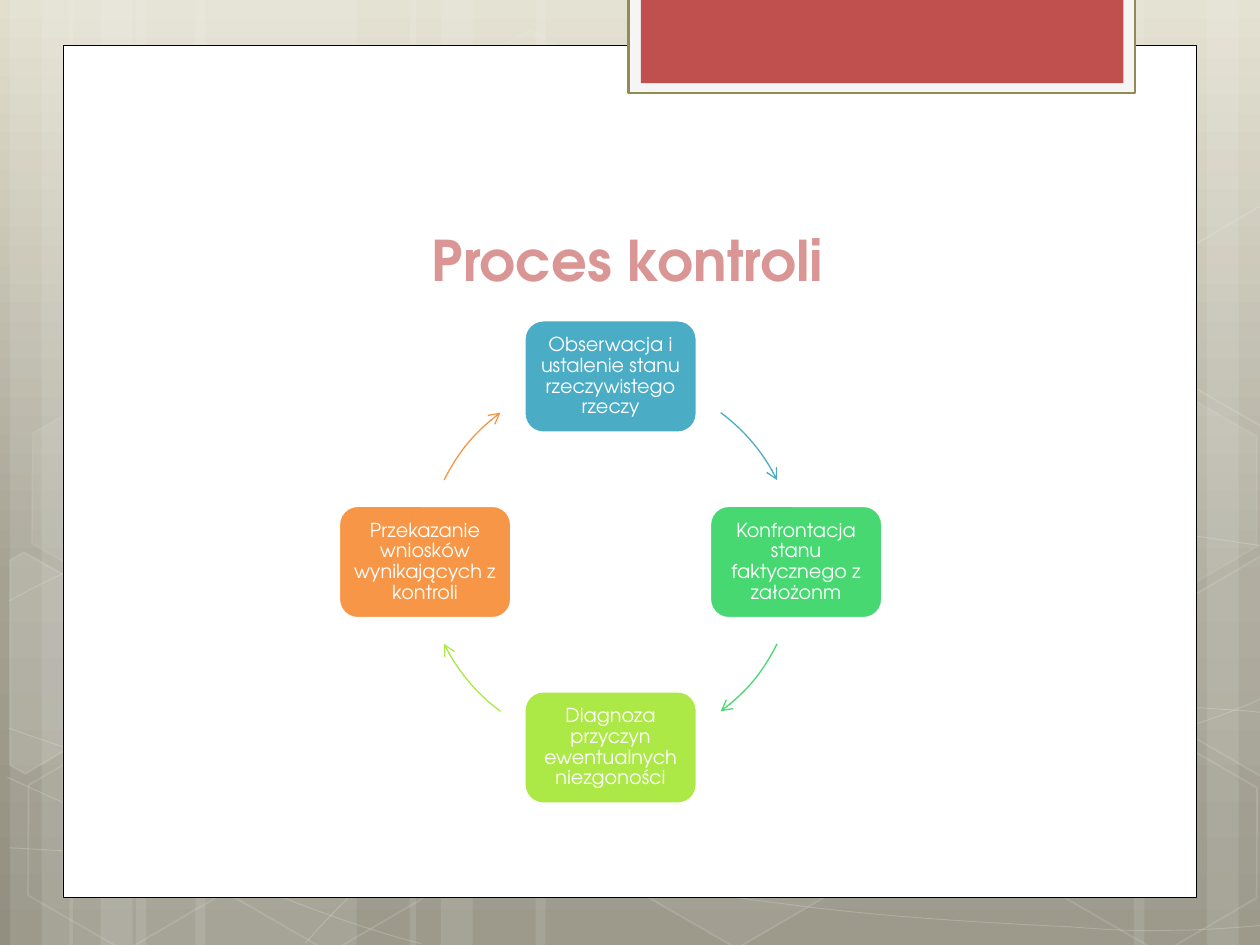
import copy
import math

import lxml.etree
import pptx
import pptx.dml.color
import pptx.enum.shapes
import pptx.enum.text
import pptx.oxml.ns
import pptx.util
from pptx.util import Cm

FONT = "TeX Gyre Adventor"
WIDTH, HEIGHT = 25.4, 19.05
TITLE = "Proces kontroli"
# text, colour, direction of the box from the centre, start and end of the arrow's arc (degrees)
STEPS = [
    ("Obserwacja i ustalenie stanu rzeczywistego rzeczy", "4BACC6", 270, (306.4, 333.8)),
    ("Konfrontacja stanu faktycznego z założonm", "47D872", 0, (26.2, 53.6)),
    ("Diagnoza przyczyn ewentualnych niezgoności", "ACE946", 90, (126.4, 153.8)),
    ("Przekazanie wniosków wynikających z kontroli", "F79646", 180, (206.2, 233.6)),
]
CENTRE_X, CENTRE_Y, RADIUS = 12.31, 11.33, 3.74
BOX_WIDTH, BOX_HEIGHT = 3.47, 2.26

BACKGROUND = [(0, "E2DFCF"), (0.62, "A5A293"), (1, "928F80")]
# left, width
STRIPES = [(2.74, 4.45), (0.2, 1.27), (0.84, 2.11), (3.94, 4.45), (1.4, 1.27), (2.03, 2.11),
           (18.62, 4.45), (24.33, 1.27), (22.86, 2.11), (10.8, 7.82), (8.26, 1.27), (8.89, 2.11)]
# Bezier chains: a start, then two handles and an end for each segment
CURVES = [
    [(0.18, 17.09), (1.55, 17.17), (2.92, 17.25), (4.83, 17.22), (6.73, 17.2), (9.09, 17.15),
     (11.63, 16.89), (14.17, 16.64), (17.78, 16.15), (20.12, 15.67), (22.43, 15.19),
     (24.82, 14.43), (25.58, 14)],
    [(0.18, 12.12), (0.91, 11.71), (1.65, 11.33), (3.07, 10.95), (4.52, 10.57), (6.58, 10.01),
     (8.81, 9.83), (11.07, 9.65), (13.82, 9.63), (16.61, 9.83), (19.41, 10.03),
     (24.05, 10.82), (25.58, 11.02)],
    [(0.15, 15.67), (3.23, 17.07), (6.27, 18.47), (8.48, 19.02)],
    [(0.18, 14.68), (0.97, 14.96), (1.78, 15.24), (3.25, 15.65), (4.72, 16.03), (6.93, 16.66),
     (9.07, 17.09), (11.18, 17.53), (13.84, 17.98), (15.95, 18.24), (18.06, 18.52),
     (20.32, 18.62), (21.67, 18.69), (22.99, 18.8), (23.34, 18.75), (24, 18.75),
     (24.66, 18.72), (25.12, 18.69), (25.58, 18.64)],
    [(6.15, 19.02), (6.6, 18.52), (7.06, 18.01), (7.67, 17.55), (8.28, 17.09), (9.14, 16.59),
     (9.86, 16.23), (10.57, 15.88), (11, 15.72), (11.94, 15.47), (12.85, 15.21),
     (14.55, 14.86), (15.44, 14.68), (16.36, 14.5), (16.48, 14.5), (17.27, 14.45),
     (18.06, 14.38), (19.3, 14.3), (20.17, 14.27), (21.06, 14.25), (22.5, 14.27),
     (22.5, 14.27), (23, 14.27), (23.6, 14.27), (24.21, 14.27), (24.66, 14.3),
     (25.1, 14.33), (25.32, 14.35), (25.55, 14.38), (25.48, 14.35), (25.55, 14.38)],
]
# left, top, fill opacity, line opacity (percent)
HEXAGONS = [(8.48, 0.91, 4, 8), (12.62, 14.96, 6, 12), (0.28, 15.01, 0, 12),
            (0.36, 7.92, 7, 8), (4.42, 15.04, 0, 12), (19.13, 11.51, 10, 12),
            (21.18, 15.06, 0, 12), (21.18, 7.98, 7, 8)]
# fill opacity, corners
CUT_HEXAGONS = [
    (10, [(0.2, 11.3), (0.48, 11.13), (2.44, 12.24), (2.41, 14.48), (0.51, 15.6), (0.2, 15.42)]),
    (4, [(23.52, 12.32), (25.43, 11.2), (25.63, 11.33), (25.63, 15.57), (25.45, 15.67),
         (23.52, 14.55)]),
    (0, [(23.52, 5.26), (25.43, 4.14), (25.65, 4.27), (25.63, 8.51), (25.45, 8.61),
         (23.52, 7.49)]),
]
# left, top, width, height, fill, line, line width
FRAMES = [(1.27, 0.91, 22.86, 17.19, "FFFFFF", "000000", 0.5),
          (12.67, -0.05, 10.21, 1.93, "F5F5F5", "948A54", 1.25),
          (12.92, -0.05, 9.73, 1.73, "C0504D", None, 0)]

KIND = pptx.enum.shapes.MSO_SHAPE
ANCHOR = pptx.enum.text.MSO_ANCHOR
qn = pptx.oxml.ns.qn


def colour(code):
    return pptx.dml.color.RGBColor.from_string(code)


def fade(parent, percent):
    """Make the solid colour inside an XML element partly transparent."""
    if percent < 100:
        rgb = parent.find(qn("a:solidFill")).find(qn("a:srgbClr"))
        lxml.etree.SubElement(rgb, qn("a:alpha"), val=str(percent * 1000))


def style(shape, fill=None, fill_opacity=100, line=None, line_width=1, line_opacity=100):
    shape.shadow.inherit = False
    properties = shape.element.spPr
    if fill and fill_opacity:
        shape.fill.solid()
        shape.fill.fore_color.rgb = colour(fill)
        fade(properties, fill_opacity)
    else:
        shape.fill.background()
    if line:
        shape.line.color.rgb = colour(line)
        shape.line.width = pptx.util.Pt(line_width)
        fade(properties.find(qn("a:ln")), line_opacity)
    else:
        shape.line.fill.background()
    return shape


def add_preset(slide, kind, left, top, width, height, **look):
    shape = slide.shapes.add_shape(kind, Cm(left), Cm(top), Cm(width), Cm(height))
    return style(shape, **look)


def add_outline(slide, points, close, **look):
    start, *rest = [(Cm(x), Cm(y)) for x, y in points]
    builder = slide.shapes.build_freeform(*start)
    builder.add_line_segments(rest, close=close)
    return style(builder.convert_to_shape(), **look)


def bend(shape):
    """Turn each three straight segments of a freeform into one Bezier segment."""
    outline = shape.element.find(".//" + qn("a:path"))
    segments = outline.findall(qn("a:lnTo"))
    for first in range(0, len(segments), 3):
        curve = lxml.etree.SubElement(outline, qn("a:cubicBezTo"))
        for segment in segments[first:first + 3]:
            curve.append(segment[0])
            outline.remove(segment)


def write(shape, text, size, code, bold=False, anchor=ANCHOR.MIDDLE, inset=None,
          line_spacing=None, space_after=None):
    frame = shape.text_frame
    frame.word_wrap = True
    frame.vertical_anchor = anchor
    if inset is not None:
        frame.margin_left = frame.margin_right = Cm(inset)
        frame.margin_top = frame.margin_bottom = Cm(inset)
    para = frame.paragraphs[0]
    para.alignment = pptx.enum.text.PP_ALIGN.CENTER
    para.line_spacing = line_spacing
    if space_after is not None:
        para.space_after = pptx.util.Pt(space_after)
    span = para.add_run()
    span.text = text
    span.font.name, span.font.size, span.font.bold = FONT, pptx.util.Pt(size), bold
    span.font.color.rgb = colour(code)


def add_background(slide):
    fill = slide.background.fill
    fill.gradient()
    fill.gradient_angle = 270
    stops = slide.element.find(".//" + qn("a:gsLst"))
    stops.append(copy.deepcopy(stops[-1]))
    for stop, (position, code) in zip(fill.gradient_stops, BACKGROUND):
        stop.position = position
        stop.color.rgb = colour(code)
    for left, width in STRIPES:
        add_preset(slide, KIND.RECTANGLE, left, 0, width, HEIGHT, fill="FFFFFF", fill_opacity=10)
    for chain in CURVES:
        bend(add_outline(slide, chain, False, line="FFFFFF", line_width=0.5, line_opacity=20))
    for left, top, inside, edge in HEXAGONS:
        hexagon = add_preset(slide, KIND.HEXAGON, left, top, 4.45, 3.86, fill="FFFFFF",
                             fill_opacity=inside, line="FFFFFF", line_opacity=edge)
        hexagon.adjustments[0] = 0.285
        hexagon.rotation = 30
    for inside, corners in CUT_HEXAGONS:
        add_outline(slide, corners, True, fill="FFFFFF", fill_opacity=inside,
                    line="FFFFFF", line_opacity=12)
    for left, top, width, height, fill, line, line_width in FRAMES:
        add_preset(slide, KIND.RECTANGLE, left, top, width, height, fill=fill,
                   line=line, line_width=line_width)


def add_title(slide):
    title = slide.shapes.title
    slide.shapes.element.append(title.element)  # in front of the white panel
    title.left, title.top, title.width, title.height = Cm(2.9), Cm(2.84), Cm(19.51), Cm(3.18)
    write(title, TITLE, 32, "D99694", bold=True, anchor=ANCHOR.BOTTOM)


def add_cycle(slide):
    for text, code, direction, arc in STEPS:
        x = CENTRE_X + RADIUS * math.cos(math.radians(direction))
        y = CENTRE_Y + RADIUS * math.sin(math.radians(direction))
        box = add_preset(slide, KIND.ROUNDED_RECTANGLE, x - BOX_WIDTH / 2, y - BOX_HEIGHT / 2,
                         BOX_WIDTH, BOX_HEIGHT, fill=code, line="FFFFFF", line_width=1.25)
        write(box, text, 11, "FFFFFF", inset=0.12, line_spacing=0.9, space_after=3.85)
        arrow = add_preset(slide, KIND.ARC, CENTRE_X - RADIUS, CENTRE_Y - RADIUS,
                           2 * RADIUS, 2 * RADIUS, line=code, line_width=0.75)
        for index, angle in enumerate(arc):
            arrow.adjustments[index] = angle * 0.6  # 60000 units a degree, in 100000ths
        lxml.etree.SubElement(arrow.element.spPr.find(qn("a:ln")), qn("a:tailEnd"), type="arrow")


def main():
    deck = pptx.Presentation()
    deck.slide_width, deck.slide_height = Cm(WIDTH), Cm(HEIGHT)
    slide = deck.slides.add_slide(deck.slide_layouts[5])
    add_background(slide)
    add_title(slide)
    add_cycle(slide)
    deck.save("out.pptx")


if __name__ == "__main__":
    main()
